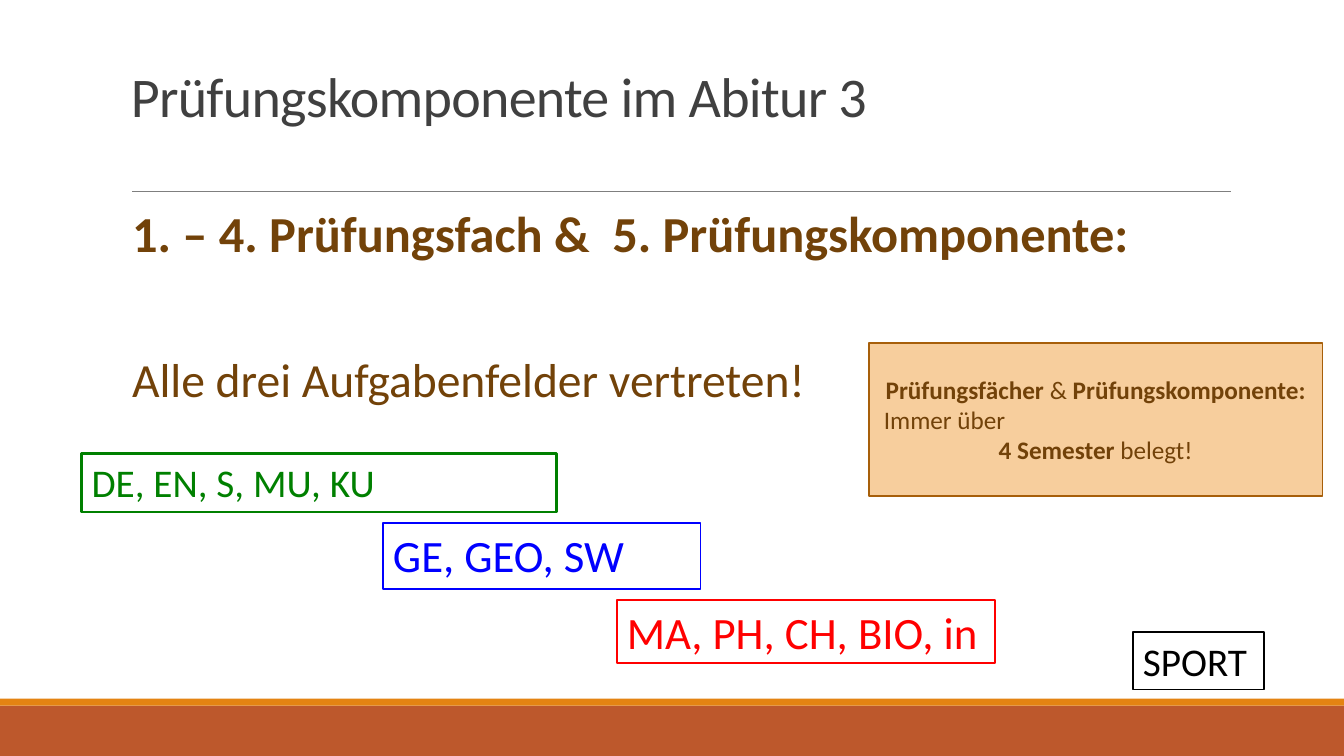
from lxml.etree import SubElement
from pptx import Presentation
from pptx.dml.color import RGBColor
from pptx.enum.shapes import MSO_CONNECTOR as Connector, MSO_SHAPE as Preset
from pptx.enum.text import MSO_ANCHOR as Anchor, PP_ALIGN as Align
from pptx.oxml.ns import qn
from pptx.util import Inches, Pt

COLORS = {
    "rust": "BD582C", "orange": "E48312", "rule": "7F7F7F", "title": "404040",
    "brown": "724209", "peach": "F7CE9D", "amber": "A75F0A", "green": "008000",
    "blue": "0000FF", "red": "FF0000", "black": "000000",
}


def color(name):
    return RGBColor.from_string(COLORS[name])


def add_run(paragraph, text, size=18, tint="brown", bold=False, spacing=None):
    run = paragraph.add_run()
    run.text = text
    run.font.name = "Calibri"
    run.font.size = Pt(size)
    run.font.bold = bold
    run.font.color.rgb = color(tint)
    if spacing is not None:
        run._r.get_or_add_rPr().set("spc", str(round(spacing * 100)))


class SlideBuilder:
    """Draw styled elements on one slide, placed by percent of its width and height."""

    def __init__(self, presentation):
        self.width = presentation.slide_width
        self.height = presentation.slide_height
        self.slide = presentation.slides.add_slide(presentation.slide_layouts[6])

    def place(self, left, top, width, height):
        return [round(share * length / 100) for share, length in zip(
            (left, top, width, height), (self.width, self.height) * 2)]

    def box(self, area, fill=None, line=None, line_width=1.25):
        shape = self.slide.shapes.add_shape(Preset.RECTANGLE, *self.place(*area))
        shape.shadow.inherit = False
        if fill:
            shape.fill.solid()
            shape.fill.fore_color.rgb = color(fill)
        else:
            shape.fill.background()
        if line:
            shape.line.color.rgb = color(line)
            shape.line.width = Pt(line_width)
        else:
            shape.line.fill.background()
        return shape

    def rule(self, left, right, y):
        x1, y1, x2, y2 = self.place(left, y, right, y)
        connector = self.slide.shapes.add_connector(Connector.STRAIGHT, x1, y1, x2, y2)
        connector.line.color.rgb = color("rule")
        connector.line.width = Pt(0.5)
        SubElement(connector._element.spPr, qn("a:effectLst"))

    def text(self, area, anchor=Anchor.TOP):
        frame = self.slide.shapes.add_textbox(*self.place(*area)).text_frame
        frame.word_wrap = True
        frame.vertical_anchor = anchor
        return frame

    def subject_box(self, area, text, tint, size, line_width):
        frame = self.box(area, line=tint, line_width=line_width).text_frame
        frame.word_wrap = True
        frame.vertical_anchor = Anchor.TOP
        frame.paragraphs[0].alignment = Align.LEFT
        add_run(frame.paragraphs[0], text, size=size, tint=tint)

    def note(self, area, lines):
        frame = self.box(area, fill="peach", line="amber").text_frame
        frame.word_wrap = True
        frame.vertical_anchor = Anchor.MIDDLE
        for index, (align, indent, runs) in enumerate(lines):
            paragraph = frame.add_paragraph() if index else frame.paragraphs[0]
            paragraph.alignment = align
            paragraph._p.get_or_add_pPr().set("marL", str(Inches(indent)))
            for text, bold in runs:
                add_run(paragraph, text, bold=bold)


def main():
    presentation = Presentation()
    presentation.slide_width, presentation.slide_height = Inches(13.33), Inches(7.5)
    builder = SlideBuilder(presentation)

    builder.box((0, 93.33, 100, 6.67), fill="rust")
    builder.box((0, 92.4, 100, 0.93), fill="orange")
    builder.rule(9.83, 91.6, 25.33)

    body = builder.text((9, 26.93, 82.5, 58.67))
    body.margin_left, body.margin_right = Inches(0.11), 0
    heading, statement = body.paragraphs[0], body.add_paragraph()
    heading.line_spacing = statement.line_spacing = 0.9
    heading.space_before, statement.space_before = Pt(12), Pt(67)
    add_run(heading, "1. – 4. Prüfungsfach &  5. Prüfungskomponente:", size=36, bold=True)
    add_run(statement, "Alle drei Aufgabenfelder vertreten!", size=34)

    title = builder.text((9, 7.47, 56.55, 10.27), Anchor.BOTTOM).paragraphs[0]
    title.line_spacing = 0.85
    add_run(title, "Prüfungskomponente im Abitur 3", size=40, tint="title", spacing=-0.5)

    for subject in (
        ((6.08, 60, 35.33, 7.73), "DE, EN, S, MU, KU", "green", 28, 1.75),
        ((28.5, 69.2, 23.63, 8.67), "GE, GEO, SW", "blue", 32, 1.25),
        ((45.9, 79.33, 28.13, 8.4), "MA, PH, CH, BIO, in", "red", 32, 1.5),
        ((84.3, 83.6, 9.75, 7.6), "SPORT", "black", 28, 1.25),
    ):
        builder.subject_box(*subject)

    builder.note((64.65, 45.33, 33.75, 20.27), [
        (Align.CENTER, 0, [("Prüfungsfächer", True), (" & ", False),
                           ("Prüfungskomponente:", True)]),
        (Align.LEFT, 0.05, [("Immer über", False)]),
        (Align.CENTER, 0, [("4 Semester", True), (" belegt!", False)]),
    ])
    presentation.save("out.pptx")


if __name__ == "__main__":
    main()
